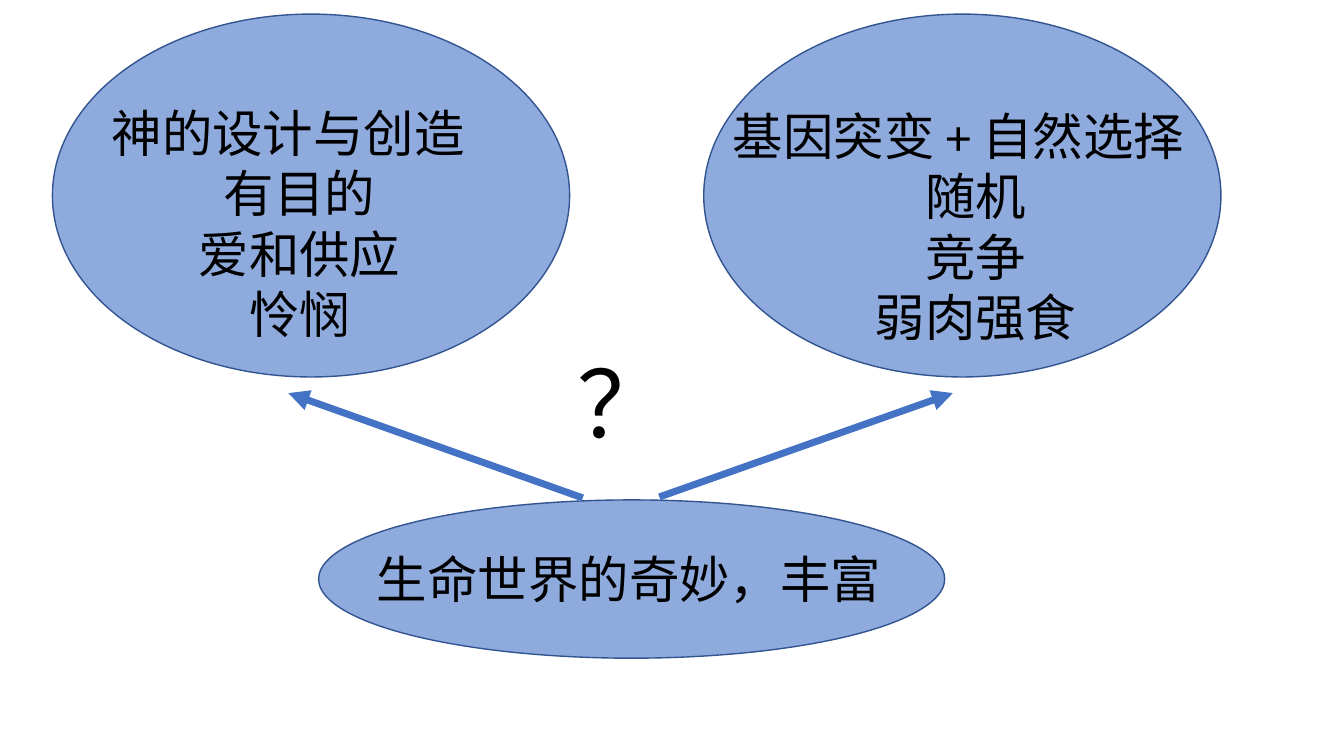
from lxml import etree
from pptx import Presentation
from pptx.dml.color import RGBColor
from pptx.enum.shapes import MSO_CONNECTOR, MSO_SHAPE
from pptx.enum.text import MSO_AUTO_SIZE, PP_ALIGN
from pptx.oxml.ns import qn
from pptx.util import Inches, Pt

ELLIPSE = MSO_SHAPE.OVAL
STRAIGHT = MSO_CONNECTOR.STRAIGHT
LEFT, CENTER = PP_ALIGN.LEFT, PP_ALIGN.CENTER
GROW = MSO_AUTO_SIZE.SHAPE_TO_FIT_TEXT


class SlideBuilder:
    """Draws the elements of one slide in a shared style."""

    font = "Calibri"
    colors = {"fill": "8FAADC", "outline": "325491", "arrow": "4472C4", "text": "000000"}

    def __init__(self, slide):
        self.shapes = slide.shapes

    def color(self, name):
        return RGBColor.from_string(self.colors[name])

    def ellipse(self, left, top, width, height):
        oval = self.shapes.add_shape(ELLIPSE, *map(Inches, (left, top, width, height)))
        oval.shadow.inherit = False
        oval.fill.solid()
        oval.fill.fore_color.rgb = self.color("fill")
        oval.line.color.rgb = self.color("outline")
        oval.line.width = Pt(1)

    def text(self, left, top, width, height, lines, size=36):
        box = self.shapes.add_textbox(*map(Inches, (left, top, width, height)))
        frame = box.text_frame
        frame.word_wrap = True
        frame.auto_size = GROW
        frame.text = "\n".join(lines)
        for index, paragraph in enumerate(frame.paragraphs):
            paragraph.alignment = CENTER if index else LEFT
            paragraph.font.name = self.font
            paragraph.font.size = Pt(size)
            paragraph.font.color.rgb = self.color("text")

    def arrow(self, start, end):
        connector = self.shapes.add_connector(STRAIGHT, *map(Inches, start + end))
        connector.line.color.rgb = self.color("arrow")
        connector.line.width = Pt(5)
        line = connector.line._get_or_add_ln()
        etree.SubElement(line, qn("a:tailEnd"), type="triangle")
        etree.SubElement(line.getparent(), qn("a:effectLst"))


def main():
    deck = Presentation()
    deck.slide_width, deck.slide_height = Inches(13.33), Inches(7.5)
    page = SlideBuilder(deck.slides.add_slide(deck.slide_layouts[6]))

    page.ellipse(3.16, 4.96, 6.21, 1.57)
    for left in (6.98, 0.52):
        page.ellipse(left, 0.14, 5.13, 3.6)

    page.text(3.64, 5.39, 6.69, 0.71, ["生命世界的奇妙，丰富"])
    page.text(1.01, 0.96, 3.92, 2.52, ["神的设计与创造", "有目的", "爱和供应", "怜悯"])
    page.text(7.17, 0.99, 5.01, 2.52, ["基因突变 + 自然选择", "随机", "竞争", "弱肉强食"])

    page.arrow((5.78, 4.94), (2.86, 3.9))
    page.arrow((6.54, 4.93), (9.45, 3.9))
    page.text(5.63, 3.38, 1.48, 1.21, ["？"], size=66)
    deck.save("out.pptx")


if __name__ == "__main__":
    main()
